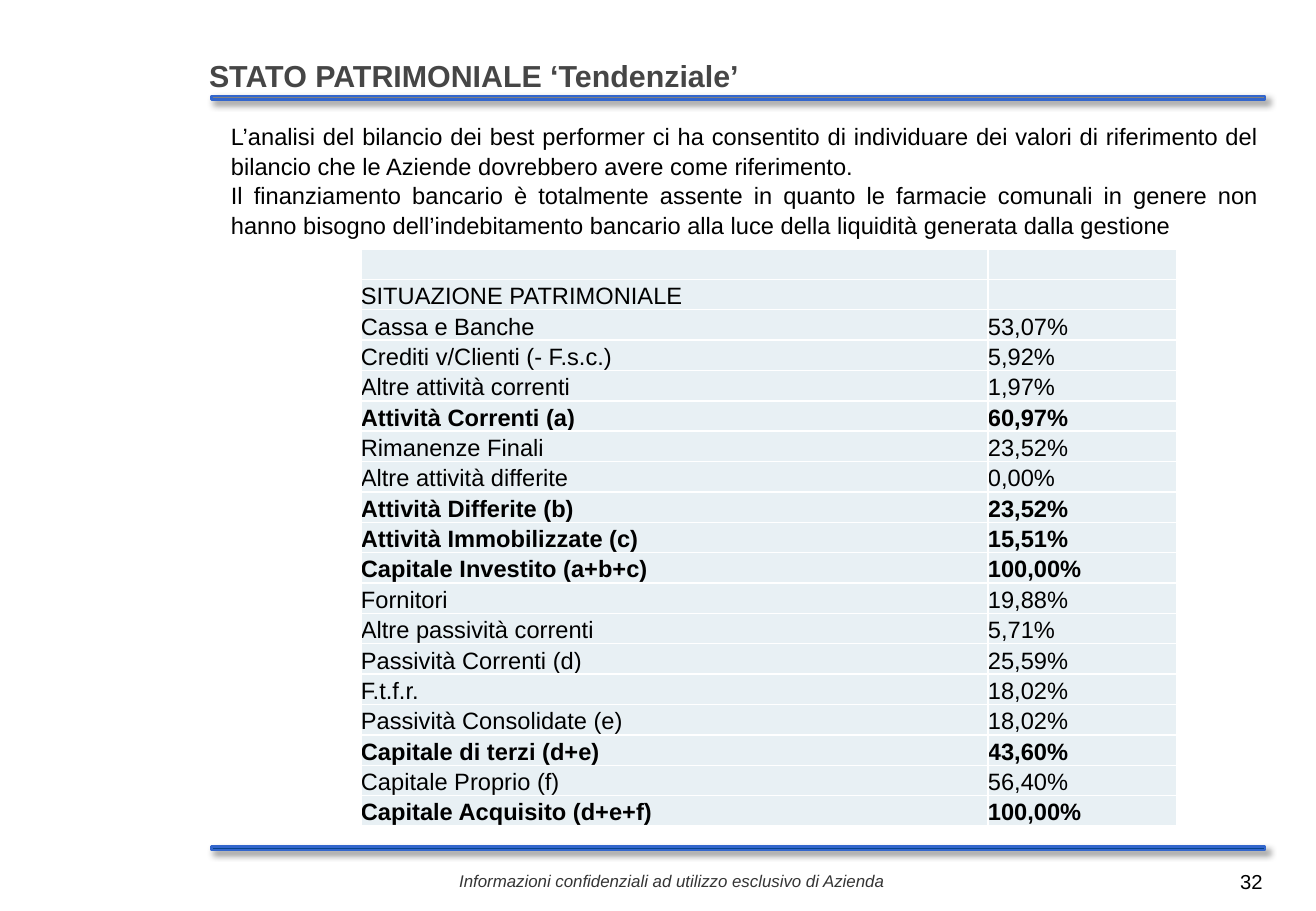
from lxml import etree
from pptx import Presentation
from pptx.dml.color import RGBColor
from pptx.enum.shapes import MSO_SHAPE
from pptx.enum.text import MSO_ANCHOR, MSO_AUTO_SIZE, PP_ALIGN
from pptx.oxml import parse_xml
from pptx.oxml.ns import nsdecls, qn
from pptx.util import Inches, Pt

RECTANGLE = MSO_SHAPE.RECTANGLE
TOP, BOTTOM = MSO_ANCHOR.TOP, MSO_ANCHOR.BOTTOM
NO_AUTOFIT = MSO_AUTO_SIZE.NONE
LEFT, RIGHT, JUSTIFY = PP_ALIGN.LEFT, PP_ALIGN.RIGHT, PP_ALIGN.JUSTIFY

FONT = "Arial"
COLORS = {
    "text": "000000",
    "title": "464646",
    "footer": "353535",
    "cell": "E8F0F4",
    "border": "FFFFFF",
    "rule_line": "3366CC",
    "top_rule": "808080",
    "bottom_rule": "05438D",
}

TITLE = "STATO PATRIMONIALE ‘Tendenziale’"
INTRODUCTION = [
    "L’analisi del bilancio dei best performer ci ha consentito di individuare dei valori di "
    "riferimento del bilancio che le Aziende dovrebbero avere come riferimento.",
    "Il finanziamento bancario è totalmente assente in quanto le farmacie comunali in genere non "
    "hanno bisogno dell’indebitamento bancario alla luce della liquidità generata dalla gestione",
]
FOOTER = "Informazioni confidenziali ad utilizzo esclusivo di Azienda"
PAGE_NUMBER = "32"
BALANCE_SHEET = [
    ("", "", False),
    ("SITUAZIONE PATRIMONIALE", "", False),
    ("Cassa e Banche", "53,07%", False),
    ("Crediti v/Clienti (- F.s.c.)", "5,92%", False),
    ("Altre attività correnti", "1,97%", False),
    ("Attività Correnti (a)", "60,97%", True),
    ("Rimanenze Finali", "23,52%", False),
    ("Altre attività differite", "0,00%", False),
    ("Attività Differite (b)", "23,52%", True),
    ("Attività Immobilizzate (c)", "15,51%", True),
    ("Capitale Investito (a+b+c)", "100,00%", True),
    ("Fornitori", "19,88%", False),
    ("Altre passività correnti", "5,71%", False),
    ("Passività Correnti (d)", "25,59%", False),
    ("F.t.f.r.", "18,02%", False),
    ("Passività Consolidate (e)", "18,02%", False),
    ("Capitale di terzi (d+e)", "43,60%", True),
    ("Capitale Proprio (f)", "56,40%", False),
    ("Capitale Acquisito (d+e+f)", "100,00%", True),
]
RULES = [(0.79, "top_rule"), (6.97, "bottom_rule")]
COLUMN_WIDTHS = [5.16, 1.55]
ROW_HEIGHT = 0.25


def color(name):
    return RGBColor.from_string(COLORS[name])


def place(shape, left, top, width, height):
    shape.left, shape.top = Inches(left), Inches(top)
    shape.width, shape.height = Inches(width), Inches(height)


def format_text(paragraph, size, color_name="text", align=LEFT, bold=False, italic=False):
    paragraph.alignment = align
    for run in paragraph.runs:
        run.font.name = FONT
        run.font.size = Pt(size)
        run.font.bold = bold
        run.font.italic = italic
        run.font.color.rgb = color(color_name)


def add_rule(slide, top, fill_name):
    rule = slide.shapes.add_shape(
        RECTANGLE, Inches(1.74), Inches(top), Inches(8.67), Inches(0.03))
    rule.fill.solid()
    rule.fill.fore_color.rgb = color(fill_name)
    rule.line.color.rgb = color("rule_line")
    rule.line.width = Pt(1.5)
    rule.shadow.inherit = False
    effects = rule._element.spPr.find(qn("a:effectLst"))
    effects.append(parse_xml(
        f'<a:outerShdw {nsdecls("a")} blurRad="{Pt(4)}" dist="{Pt(3)}" dir="2700000" '
        'algn="tl" rotWithShape="0"><a:srgbClr val="000000"><a:alpha val="40000"/>'
        '</a:srgbClr></a:outerShdw>'))


def add_label(slide, box, text, wrap, **style):
    label = slide.shapes.add_textbox(*map(Inches, box))
    label.text_frame.word_wrap = wrap
    label.text_frame.text = text
    format_text(label.text_frame.paragraphs[0], **style)


def fill_cell(cell, text, bold):
    cell.margin_left = cell.margin_right = cell.margin_top = cell.margin_bottom = 0
    cell.vertical_anchor = BOTTOM
    cell.text = text
    paragraph = cell.text_frame.paragraphs[0]
    format_text(paragraph, 14, align=JUSTIFY, bold=bold)
    if not text:
        etree.SubElement(paragraph._p, qn("a:endParaRPr"), sz="1400")
    properties = cell._tc.get_or_add_tcPr()
    for side in ("lnL", "lnR", "lnT", "lnB"):
        properties.append(parse_xml(
            f'<a:{side} {nsdecls("a")} w="{Pt(1)}"><a:solidFill>'
            f'<a:srgbClr val="{COLORS["border"]}"/></a:solidFill></a:{side}>'))
    cell.fill.solid()
    cell.fill.fore_color.rgb = color("cell")


def add_balance_sheet(slide):
    frame = slide.shapes.add_table(
        len(BALANCE_SHEET), len(COLUMN_WIDTHS), Inches(2.97), Inches(2.05),
        Inches(sum(COLUMN_WIDTHS)), Inches(ROW_HEIGHT * len(BALANCE_SHEET)))
    table = frame.table
    table.first_row = table.horz_banding = False
    for column, width in zip(table.columns, COLUMN_WIDTHS):
        column.width = Inches(width)
    for row, (item, share, bold) in zip(table.rows, BALANCE_SHEET):
        row.height = Inches(ROW_HEIGHT)
        for cell, text in zip(row.cells, (item, share)):
            fill_cell(cell, text, bold)


def fill_title(title):
    place(title, 1.62, 0.42, 7.53, 0.72)
    title.text_frame.text = TITLE
    title.text_frame.vertical_anchor = TOP
    title.text_frame.auto_size = NO_AUTOFIT
    format_text(title.text_frame.paragraphs[0], 18, "title", bold=True)


def fill_introduction(body):
    place(body, 1.8, 0.94, 8.66, 1.04)
    body.text_frame.text = "\n".join(INTRODUCTION)
    body.text_frame.auto_size = NO_AUTOFIT
    for paragraph in body.text_frame.paragraphs:
        properties = paragraph._p.get_or_add_pPr()
        properties.set("marL", "0")
        properties.set("indent", "0")
        etree.SubElement(properties, qn("a:buNone"))
        paragraph.space_before = Pt(0)
        paragraph.line_spacing = 1.05
        format_text(paragraph, 14, align=JUSTIFY)


def main():
    presentation = Presentation()
    presentation.slide_width = Inches(10.83)
    presentation.slide_height = Inches(7.5)
    slide = presentation.slides.add_slide(presentation.slide_layouts[1])
    fill_title(slide.shapes.title)
    fill_introduction(slide.placeholders[1])
    for top, fill_name in RULES:
        add_rule(slide, top, fill_name)
    add_balance_sheet(slide)
    add_label(slide, (3.68, 7.12, 3.82, 0.27), FOOTER, False,
              size=10, color_name="footer", italic=True)
    add_label(slide, (8.16, 7.11, 2.33, 0.4), PAGE_NUMBER, True, size=12, align=RIGHT)
    presentation.save("out.pptx")


if __name__ == "__main__":
    main()
